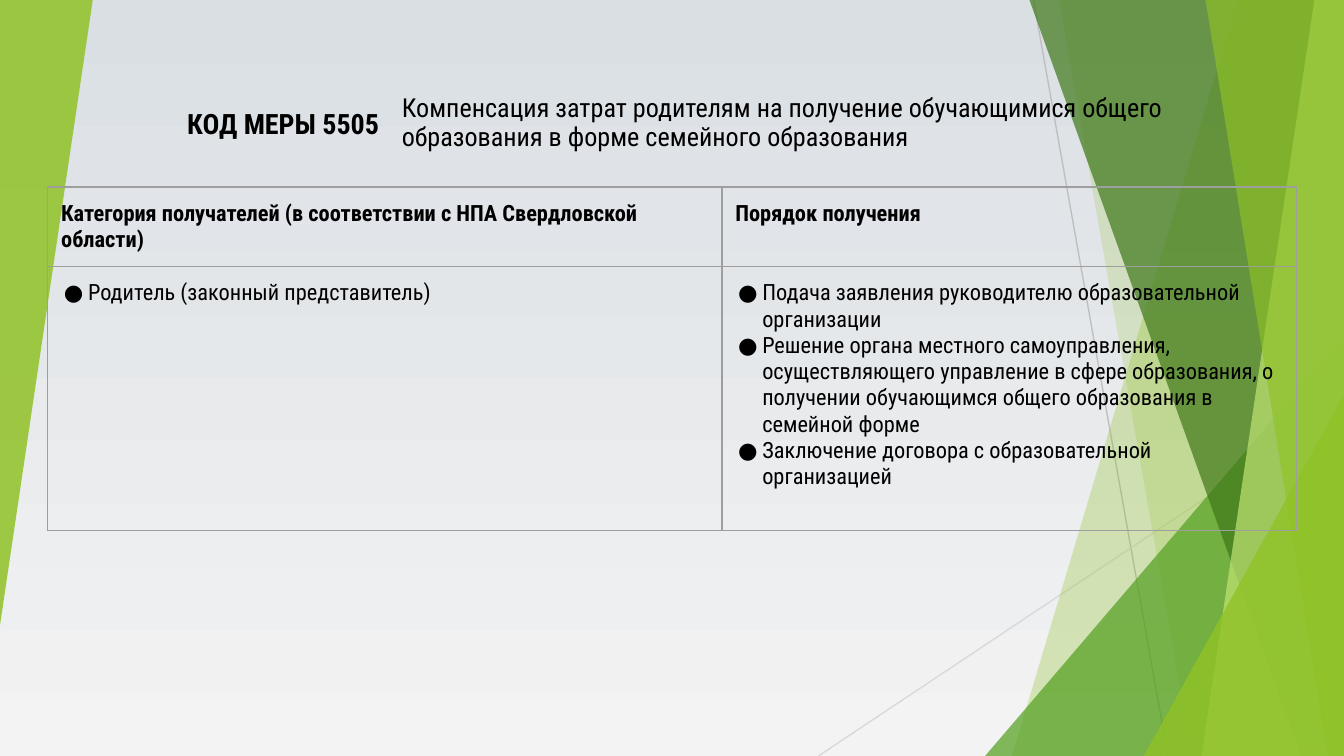
from collections import namedtuple
from dataclasses import dataclass

from lxml import etree
from pptx import Presentation
from pptx.dml.color import RGBColor
from pptx.enum.shapes import MSO_CONNECTOR, MSO_SHAPE
from pptx.enum.text import MSO_ANCHOR, MSO_AUTO_SIZE, PP_ALIGN
from pptx.oxml.ns import qn
from pptx.util import Emu, Inches, Pt

STRAIGHT = MSO_CONNECTOR.STRAIGHT
TRIANGLE = MSO_SHAPE.ISOSCELES_TRIANGLE
MIDDLE, TOP = MSO_ANCHOR.MIDDLE, MSO_ANCHOR.TOP
LEFT, RIGHT = PP_ALIGN.LEFT, PP_ALIGN.RIGHT
NO_AUTOFIT = MSO_AUTO_SIZE.NONE
TITLE_ONLY = 5

Box = namedtuple("Box", "left top width height")


@dataclass(frozen=True)
class Theme:
    """Colours, font and type sizes of the deck."""
    font: str = "Roboto Condensed"
    ink: str = "000000"
    sky: str = "DADFE4"
    ground: str = "F3F3F3"
    steep_line: str = "BFBFBF"
    flat_line: str = "D9D9D9"
    border: str = "9E9E9E"
    green: str = "90C226"
    leaf: str = "54A021"
    forest: str = "3F7819"
    lime: str = "C0E474"
    code_size: int = 15
    title_size: int = 14
    table_size: int = 12
    hairline: float = 0.75


THEME = Theme()

CODE = "КОД МЕРЫ 5505"
MEASURE = ("Компенсация затрат родителям на получение обучающимися общего "
           "образования в форме семейного образования")
HEADINGS = ["Категория получателей (в соответствии с НПА Свердловской области)",
            "Порядок получения"]
RECIPIENTS = ["Родитель (законный представитель)"]
STEPS = [
    "Подача заявления руководителю образовательной организации",
    "Решение органа местного самоуправления, осуществляющего управление в сфере "
    "образования, о получении обучающимся общего образования в семейной форме",
    "Заключение договора с образовательной организацией",
]


def set_all(target, **values):
    """Set each named attribute on the target."""
    for name, value in values.items():
        setattr(target, name, value)


def point(box, x, y):
    """Return the point at x and y percent of the box."""
    return Emu(int(box.left + box.width * x / 100)), Emu(int(box.top + box.height * y / 100))


def part(box, x, y, width, height):
    """Return the part of the box given in percent of its size."""
    return Box(*point(box, x, y), Emu(int(box.width * width / 100)),
               Emu(int(box.height * height / 100)))


def paint(facet, color, opacity):
    """Fill a facet with a see-through colour and no outline."""
    facet.shadow.inherit = False
    facet.fill.solid()
    facet.fill.fore_color.rgb = RGBColor.from_string(color)
    facet.line.fill.background()
    tint = facet.fill._xPr.find(".//" + qn("a:srgbClr"))
    etree.SubElement(tint, qn("a:alpha"), val=str(opacity * 1000))


def add_ray(slide, box, start, end, color):
    """Draw a thin straight line between two points of the box."""
    ray = slide.shapes.add_connector(STRAIGHT, *point(box, *start), *point(box, *end))
    ray.line.width = Pt(THEME.hairline)
    ray.line.color.rgb = RGBColor.from_string(color)
    etree.SubElement(ray.element.spPr, qn("a:effectLst"))


def add_band(slide, box, top_x, bottom_x, color, opacity):
    """Draw a full-height facet from a slanted left edge to the right side."""
    builder = slide.shapes.build_freeform(*point(box, top_x, 0))
    builder.add_line_segments([point(box, 100, 0), point(box, 100, 100),
                               point(box, bottom_x, 100)], close=True)
    paint(builder.convert_to_shape(), color, opacity)


def add_corner(slide, area, color, opacity, rotation=0):
    """Draw a right-angled triangle that fills the area."""
    corner = slide.shapes.add_shape(TRIANGLE, *area)
    corner.adjustments[0] = 1
    corner.rotation = rotation
    paint(corner, color, opacity)


def add_backdrop(slide, box):
    """Place the gradient, rays and green facets."""
    sky = slide.background.fill
    sky.gradient()
    sky.gradient_angle = 270
    for stop, color in zip(sky.gradient_stops, (THEME.sky, THEME.ground)):
        stop.color.rgb = RGBColor.from_string(color)
    add_ray(slide, box, (76.9, 0), (86.9, 100), THEME.steep_line)
    add_ray(slide, box, (100, 53.7), (60.9, 100), THEME.flat_line)
    add_band(slide, box, 92.1, 75.3, THEME.green, 30)
    add_band(slide, box, 78.8, 88.7, THEME.green, 20)
    add_corner(slide, part(box, 73.3, 44.5, 26.7, 55.5), THEME.leaf, 72)
    add_band(slide, box, 76.6, 96.8, THEME.forest, 70)
    add_band(slide, box, 97.8, 89.4, THEME.lime, 70)
    add_band(slide, box, 89.7, 98.8, THEME.green, 65)
    add_corner(slide, part(box, 85.1, 52.3, 14.9, 47.7), THEME.green, 80)
    add_corner(slide, part(box, 0, 0, 6.9, 82.7), THEME.green, 85, rotation=180)


def write(paragraph, text, size, bold=False, align=LEFT):
    """Write one run in the theme font."""
    paragraph.alignment = align
    run = paragraph.add_run()
    run.text = text
    set_all(run.font, name=THEME.font, size=Pt(size), bold=bold)
    run.font.color.rgb = RGBColor.from_string(THEME.ink)


def format_frame(frame, side, edge):
    """Wrap a middle-anchored frame with the given insets."""
    set_all(frame, word_wrap=True, auto_size=NO_AUTOFIT, vertical_anchor=MIDDLE,
            margin_left=side, margin_right=side, margin_top=edge, margin_bottom=edge)


def add_heading(slide, box):
    """Place the measure code on the left and the title on the right."""
    code = slide.shapes.add_textbox(*part(box, 0, 0, 25, 100)).text_frame
    format_frame(code, Inches(0.1), Inches(0.1))
    write(code.paragraphs[0], CODE, THEME.code_size, bold=True, align=RIGHT)

    title = slide.shapes.title
    set_all(title, **part(box, 25, 0, 75, 100)._asdict())
    format_frame(title.text_frame, Inches(0.07), Inches(0.04))
    measure = title.text_frame.paragraphs[0]
    measure.line_spacing = 0.9
    write(measure, MEASURE, THEME.title_size)
    slide.shapes.element.append(title.element)


def add_bullet(paragraph):
    """Give a paragraph a round bullet and a hanging indent."""
    props = paragraph._p.get_or_add_pPr()
    props.set("marL", str(Inches(0.2)))
    props.set("indent", str(Inches(-0.18)))
    color = etree.SubElement(props, qn("a:buClr"))
    etree.SubElement(color, qn("a:srgbClr"), val=THEME.ink)
    etree.SubElement(props, qn("a:buFont"), typeface=THEME.font)
    etree.SubElement(props, qn("a:buChar"), char="●")


def format_cell(cell):
    """Give a cell thin borders, even margins and no fill."""
    props = cell._tc.get_or_add_tcPr()
    for side in ("lnL", "lnR", "lnT", "lnB"):
        border = etree.SubElement(props, qn("a:" + side), w=str(Pt(THEME.hairline)))
        fill = etree.SubElement(border, qn("a:solidFill"))
        etree.SubElement(fill, qn("a:srgbClr"), val=THEME.border)
    cell.fill.background()
    gap = Inches(0.1)
    set_all(cell, margin_left=gap, margin_right=gap, margin_top=gap,
            margin_bottom=gap, vertical_anchor=TOP)


def add_conditions(slide, box):
    """Place the table of recipients and steps."""
    table = slide.shapes.add_table(2, 2, *box).table
    set_all(table, first_row=False, horz_banding=False)
    for column, share in zip(table.columns, (54, 46)):
        column.width = Emu(int(box.width * share / 100))
    for row, share in zip(table.rows, (23, 77)):
        row.height = Emu(int(box.height * share / 100))
    for index, (heading, items) in enumerate(zip(HEADINGS, (RECIPIENTS, STEPS))):
        head, body = table.cell(0, index), table.cell(1, index)
        format_cell(head)
        format_cell(body)
        write(head.text_frame.paragraphs[0], heading, THEME.table_size, bold=True)
        frame = body.text_frame
        for number, item in enumerate(items):
            paragraph = frame.add_paragraph() if number else frame.paragraphs[0]
            add_bullet(paragraph)
            write(paragraph, item, THEME.table_size)


def main():
    """Build the slide and save it."""
    deck = Presentation()
    width = Inches(10)
    set_all(deck, slide_width=width, slide_height=Emu(width * 9 // 16))
    page = Box(0, 0, deck.slide_width, deck.slide_height)
    slide = deck.slides.add_slide(deck.slide_layouts[TITLE_ONLY])
    add_backdrop(slide, page)
    add_conditions(slide, part(page, 3.55, 24.75, 92.9, 45.4))
    add_heading(slide, part(page, 8.2, 9.5, 84, 13.7))
    deck.save("out.pptx")


if __name__ == "__main__":
    main()
